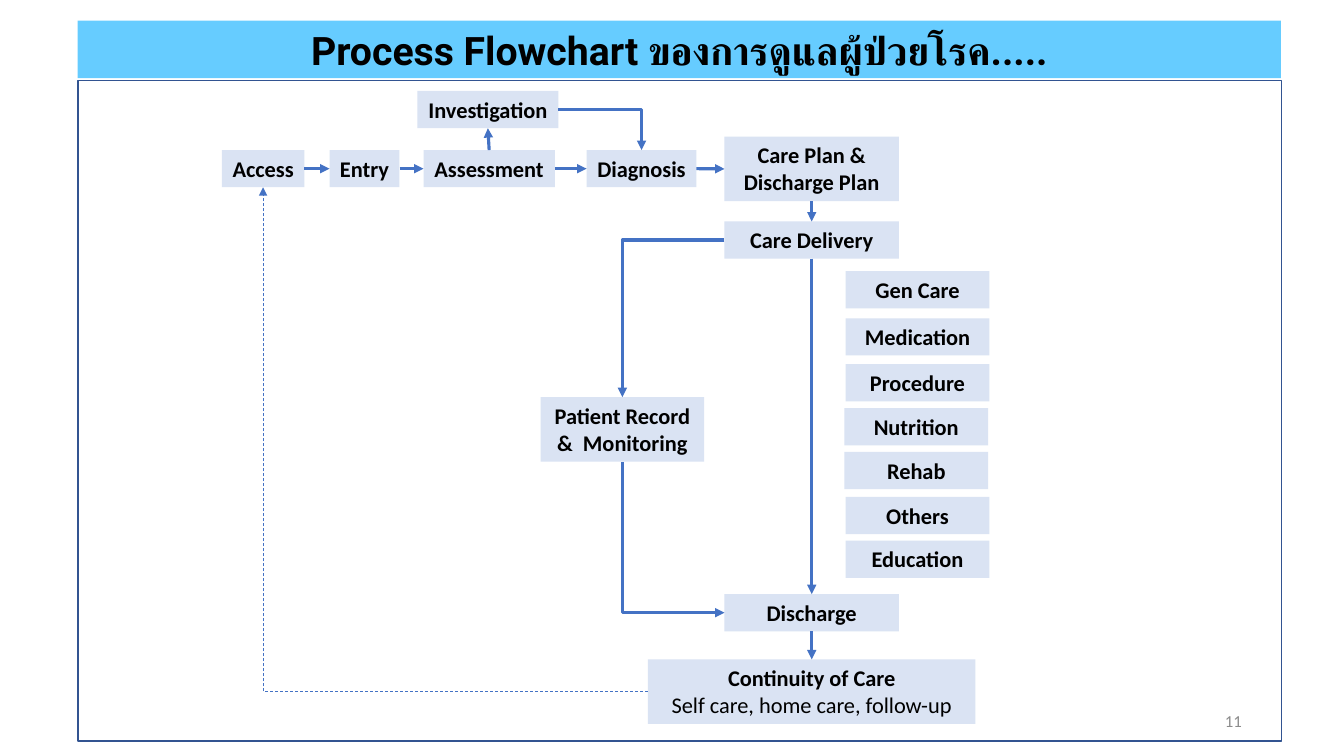
from lxml import etree
from pptx import Presentation
from pptx.dml.color import RGBColor
from pptx.enum.dml import MSO_LINE
from pptx.enum.shapes import MSO_CONNECTOR, MSO_SHAPE
from pptx.enum.text import MSO_ANCHOR, MSO_AUTO_SIZE, PP_ALIGN
from pptx.oxml.ns import qn
from pptx.util import Pt

STRAIGHT, ELBOW = MSO_CONNECTOR.STRAIGHT, MSO_CONNECTOR.ELBOW
RECTANGLE, DASH = MSO_SHAPE.RECTANGLE, MSO_LINE.DASH
TOP_ANCHOR, MIDDLE = MSO_ANCHOR.TOP, MSO_ANCHOR.MIDDLE
CENTER, RIGHT_ALIGN = PP_ALIGN.CENTER, PP_ALIGN.RIGHT
NO_FIT = MSO_AUTO_SIZE.NONE
TOP, LEFT, BOTTOM, RIGHT = range(4)

TITLE_ONLY = 5
ONE_LINE, TWO_LINES = 26.6, 46.1
ROW_TOP = 107.2
MAIN_LEFT, MAIN_WIDTH = 517.5, 124.6
CARE_WIDTH = 102.6
BOX_FONT = {"name": "Calibri", "size": Pt(16), "bold": True}
DETAIL_FONT = {**BOX_FONT, "bold": False}
TITLE_FONT = {"name": "Roboto", "size": Pt(28), "bold": True}
NUMBER_FONT = {"name": "Calibri", "size": Pt(12), "bold": False}

STEPS = [
    ("Access", 158.5, ROW_TOP, 59, ONE_LINE),
    ("Entry", 235.4, ROW_TOP, 50, ONE_LINE),
    ("Assessment", 302.5, ROW_TOP, 93.8, ONE_LINE),
    ("Diagnosis", 419, ROW_TOP, 78.5, ONE_LINE),
    ("Investigation", 298.2, 65, 100.6, ONE_LINE),
    ("Care Plan & Discharge Plan", MAIN_LEFT, 97.6, MAIN_WIDTH, TWO_LINES),
    ("Care Delivery", MAIN_LEFT, 158.2, MAIN_WIDTH, ONE_LINE),
    ("Patient Record &  Monitoring", 386.2, 283.7, 116.8, TWO_LINES),
    ("Discharge", MAIN_LEFT, 424.4, MAIN_WIDTH, ONE_LINE),
    ("Continuity of Care", 462.8, 471, 234, TWO_LINES),
]
CARE_ITEMS = [
    ("Gen Care", 604.1, 193.7),
    ("Medication", 604.1, 227.4),
    ("Procedure", 604.1, 260.2),
    ("Nutrition", 603.2, 291.6),
    ("Rehab", 603.2, 322.8),
    ("Others", 604.1, 355),
    ("Education", 604.1, 386.2),
]
STRAIGHT_ARROWS = [
    ("Access", RIGHT, "Entry", LEFT),
    ("Entry", RIGHT, "Assessment", LEFT),
    ("Assessment", RIGHT, "Diagnosis", LEFT),
    ("Assessment", TOP, "Investigation", BOTTOM),
    ("Diagnosis", RIGHT, "Care Plan & Discharge Plan", LEFT),
    ("Care Plan & Discharge Plan", BOTTOM, "Care Delivery", TOP),
    ("Care Delivery", BOTTOM, "Discharge", TOP),
    ("Discharge", BOTTOM, "Continuity of Care", TOP),
]


def color(value):
    return RGBColor.from_string(value)


def apply(target, values):
    for name, value in values.items():
        setattr(target, name, value)


def place(shape, left, top, width, height):
    apply(shape, {"left": Pt(left), "top": Pt(top),
                  "width": Pt(width), "height": Pt(height)})


def fill(shape, value):
    shape.fill.solid()
    shape.fill.fore_color.rgb = color(value)


def write(para, text, font, align=CENTER, ink="000000"):
    para.alignment = align
    span = para.add_run()
    span.text = text
    apply(span.font, font)
    span.font.color.rgb = color(ink)


def add_title(page, text):
    title = page.shapes.title
    place(title, 55.5, 14.7, 859.5, 41.2)
    fill(title, "66CCFF")
    apply(title.text_frame, {"auto_size": NO_FIT, "word_wrap": True,
                             "vertical_anchor": MIDDLE})
    write(title.text_frame.paragraphs[0], text, TITLE_FONT)


def add_frame(page):
    frame = page.shapes.add_shape(RECTANGLE, Pt(55.8), Pt(57.7), Pt(859.5), Pt(471.6))
    frame.shadow.inherit = False
    frame.fill.background()
    frame.line.color.rgb = color("325491")
    frame.line.width = Pt(1)


def add_box(page, text, left, top, width, height):
    box = page.shapes.add_shape(RECTANGLE, Pt(left), Pt(top), Pt(width), Pt(height))
    box.shadow.inherit = False
    fill(box, "DAE3F3")
    box.line.fill.background()
    apply(box.text_frame, {"word_wrap": height == TWO_LINES,
                           "vertical_anchor": TOP_ANCHOR})
    write(box.text_frame.paragraphs[0], text, BOX_FONT)
    return box


def add_arrow(page, start, start_side, end, end_side, kind=STRAIGHT,
              width=2.25, dash=None, arrow="tailEnd"):
    link = page.shapes.add_connector(kind, 0, 0, 0, 0)
    link.begin_connect(start, start_side)
    link.end_connect(end, end_side)
    link.line.color.rgb = color("4472C4")
    link.line.width = Pt(width)
    if dash:
        link.line.dash_style = dash
    properties = link.element.spPr
    if kind == ELBOW:
        properties.find(qn("a:prstGeom")).set("prst", "bentConnector2")
    etree.SubElement(link.line._get_or_add_ln(), qn("a:" + arrow), type="triangle")
    etree.SubElement(properties, qn("a:effectLst"))


def add_page_number(page, number):
    box = page.shapes.add_textbox(Pt(678.2), Pt(500.5), Pt(216), Pt(28.8))
    apply(box.text_frame, {"word_wrap": True, "vertical_anchor": MIDDLE})
    write(box.text_frame.paragraphs[0], number, NUMBER_FONT, RIGHT_ALIGN, "8C8C8C")


def main():
    deck = Presentation()
    apply(deck, {"slide_width": Pt(960), "slide_height": Pt(540)})
    page = deck.slides.add_slide(deck.slide_layouts[TITLE_ONLY])
    add_title(page, "Process Flowchart ของการดูแลผู้ป่วยโรค.....")
    add_frame(page)
    add_page_number(page, "11")

    boxes = {step[0]: add_box(page, *step) for step in STEPS}
    for text, left, top in CARE_ITEMS:
        add_box(page, text, left, top, CARE_WIDTH, ONE_LINE)
    continuity = boxes["Continuity of Care"]
    write(continuity.text_frame.add_paragraph(),
          "Self care, home care, follow-up", DETAIL_FONT)

    for start, start_side, end, end_side in STRAIGHT_ARROWS:
        add_arrow(page, boxes[start], start_side, boxes[end], end_side)
    record = boxes["Patient Record &  Monitoring"]
    add_arrow(page, boxes["Investigation"], RIGHT, boxes["Diagnosis"], TOP, ELBOW)
    add_arrow(page, boxes["Care Delivery"], LEFT, record, TOP, ELBOW)
    add_arrow(page, boxes["Discharge"], LEFT, record, BOTTOM, ELBOW, arrow="headEnd")
    add_arrow(page, continuity, LEFT, boxes["Access"], BOTTOM, ELBOW, 0.5, DASH)
    deck.save("out.pptx")


if __name__ == "__main__":
    main()
